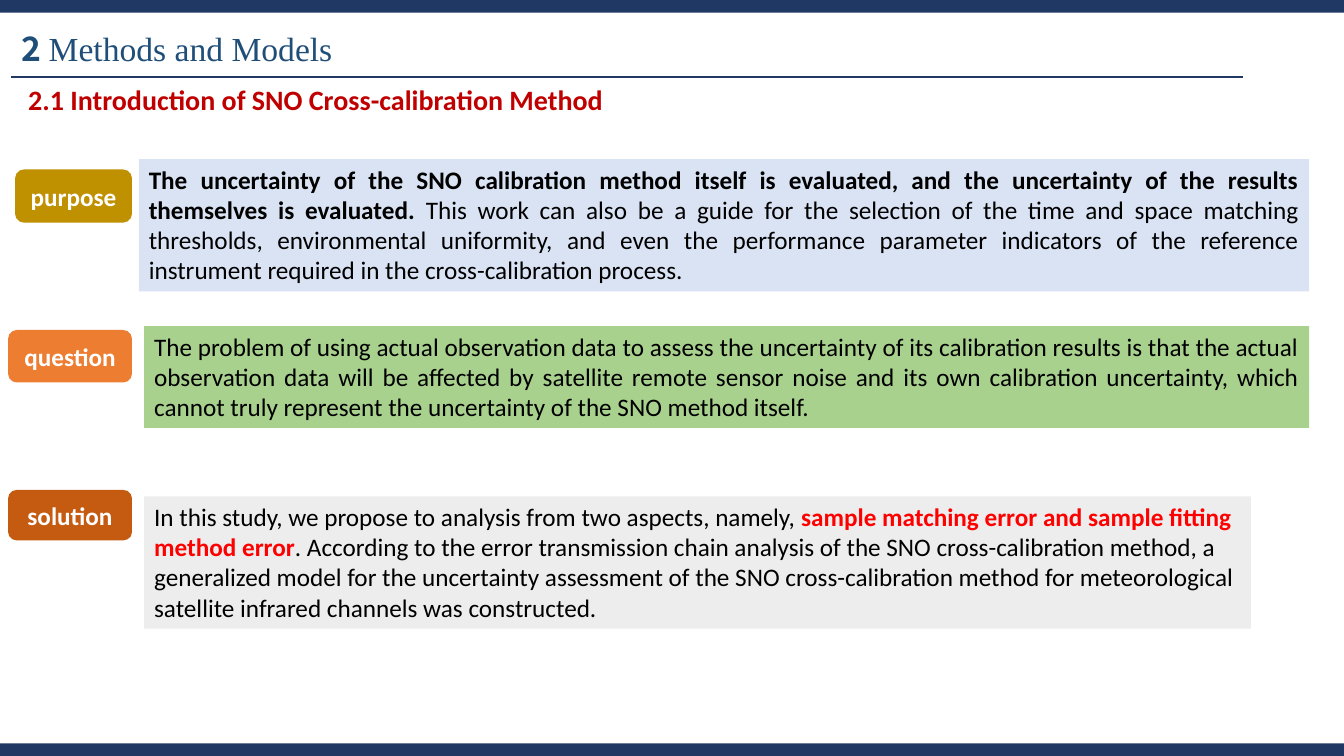
import pptx
import pptx.dml.color
import pptx.enum.shapes
import pptx.enum.text
import pptx.oxml
import pptx.util

Pt = pptx.util.Pt
SHAPE = pptx.enum.shapes.MSO_SHAPE
ALIGN = pptx.enum.text.PP_ALIGN
ANCHOR = pptx.enum.text.MSO_ANCHOR

PAGE_WIDTH, PAGE_HEIGHT = 960, 540
BAND_HEIGHT = 9
COLOURS = {
    "navy": "203864", "title": "1F4E79", "heading": "C00000",
    "black": "000000", "white": "FFFFFF", "accent": "FF0000",
    "gold": "BF9000", "orange": "ED7D31", "rust": "C55A11",
    "blue": "DAE3F3", "green": "A9D18E", "grey": "EDEDED",
}

# Each section: label, its colour and bounds, panel colour and bounds,
# alignment, and text pieces as (words, bold, colour)
SECTIONS = [
    ("purpose", "gold", (10.8, 121, 83.5, 38),
     "blue", (99.2, 113.6, 836, 94.5), ALIGN.JUSTIFY,
     [("The uncertainty of the SNO calibration method itself is evaluated, and the "
       "uncertainty of the results themselves is evaluated.", True, "black"),
      (" This work can also be a guide for the selection of the time and space matching "
       "thresholds, environmental uniformity, and even the performance parameter "
       "indicators of the reference instrument required in the cross-calibration "
       "process.", False, "black")]),
    ("question", "orange", (5.8, 235.7, 88.5, 37.5),
     "green", (103, 233, 832.2, 72.7), ALIGN.JUSTIFY,
     [("The problem of using actual observation data to assess the uncertainty of its "
       "calibration results is that the actual observation data will be affected by "
       "satellite remote sensor noise and its own calibration uncertainty, which cannot "
       "truly represent the uncertainty of the SNO method itself.", False, "black")]),
    ("solution", "rust", (5.8, 350, 88.5, 36),
     "grey", (103, 354.5, 790.5, 94.5), ALIGN.LEFT,
     [("In this study, we propose to analysis from two aspects, namely, ", False, "black"),
      ("sample matching error and sample fitting method error", True, "accent"),
      (". According to the error transmission chain analysis of the SNO "
       "cross-calibration method, a generalized model for the uncertainty assessment of "
       "the SNO cross-calibration method for meteorological satellite infrared channels "
       "was constructed.", False, "black")]),
]


def colour(name):
    return pptx.dml.color.RGBColor.from_string(COLOURS[name])


def style(font, size, name, bold, shade):
    font.size, font.name, font.bold = Pt(size), name, bold
    font.color.rgb = colour(shade)


def add_block(page, kind, bounds, fill):
    block = page.shapes.add_shape(kind, *map(Pt, bounds))
    block.shadow.inherit = False
    block.fill.solid()
    block.fill.fore_color.rgb = colour(fill)
    block.line.fill.background()
    return block


def add_label(page, text, fill, bounds):
    label = add_block(page, SHAPE.ROUNDED_RECTANGLE, bounds, fill)
    label.text_frame.vertical_anchor = ANCHOR.MIDDLE
    para = label.text_frame.paragraphs[0]
    para.text = text
    para.alignment = ALIGN.CENTER
    style(para.font, 18, "Calibri", True, "white")


def add_panel(page, fill, bounds, alignment, pieces):
    panel = add_block(page, SHAPE.RECTANGLE, bounds, fill)
    panel.text_frame.word_wrap = True
    panel.text_frame.vertical_anchor = ANCHOR.TOP
    para = panel.text_frame.paragraphs[0]
    para.alignment = alignment
    for words, bold, shade in pieces:
        span = para.add_run()
        span.text = words
        style(span.font, 18, "Calibri", bold, shade)


def set_title(page):
    title = page.shapes.title
    title.left, title.top, title.width, title.height = map(Pt, (8, 16, 247, 36))
    frame = title.text_frame
    frame.word_wrap = False
    frame.auto_size = pptx.enum.text.MSO_AUTO_SIZE.NONE
    frame.vertical_anchor = ANCHOR.MIDDLE
    para = frame.paragraphs[0]
    para.alignment = ALIGN.LEFT
    for words, name, bold in (("2 ", "Noto Sans CJK SC", True),
                              ("Methods and Models", "Times New Roman", False)):
        span = para.add_run()
        span.text = words
        style(span.font, 24, name, bold, "title")


def add_rule(page, left, top, right):
    rule = page.shapes.add_connector(
        pptx.enum.shapes.MSO_CONNECTOR.STRAIGHT, Pt(left), Pt(top), Pt(right), Pt(top))
    rule.line.color.rgb = colour("navy")
    rule.line.width = Pt(1.5)
    rule._element.spPr.append(pptx.oxml.parse_xml(
        '<a:effectLst xmlns:a="http://schemas.openxmlformats.org/drawingml/2006/main"/>'))


def add_heading(page, text, bounds):
    box = page.shapes.add_textbox(*map(Pt, bounds))
    box.text_frame.word_wrap = True
    para = box.text_frame.paragraphs[0]
    para.text = text
    style(para.font, 20, "Calibri", True, "heading")


def main():
    deck = pptx.Presentation()
    deck.slide_width, deck.slide_height = Pt(PAGE_WIDTH), Pt(PAGE_HEIGHT)
    page = deck.slides.add_slide(deck.slide_layouts.get_by_name("Title Only"))

    # Bands along the top and bottom edges
    for top in (0, PAGE_HEIGHT - BAND_HEIGHT):
        add_block(page, SHAPE.RECTANGLE, (0, top, PAGE_WIDTH, BAND_HEIGHT), "navy")

    # Title, rule and heading
    set_title(page)
    add_rule(page, 8, 55, 888)
    add_heading(page, "2.1 Introduction of SNO Cross-calibration Method",
                (13, 55.5, 502, 31.5))

    # Labelled panels
    for label, label_fill, label_bounds, fill, bounds, alignment, pieces in SECTIONS:
        add_panel(page, fill, bounds, alignment, pieces)
        add_label(page, label, label_fill, label_bounds)

    deck.save("out.pptx")


if __name__ == "__main__":
    main()
